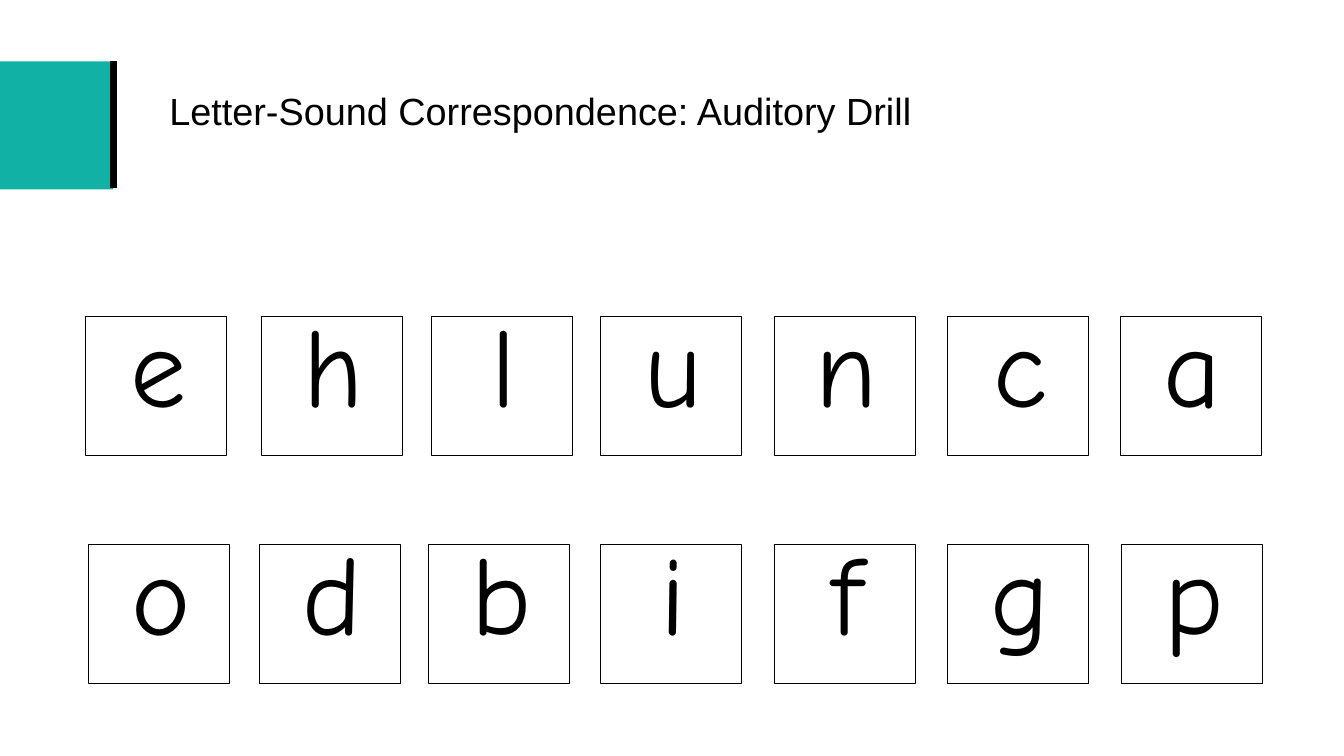
from pptx import Presentation, util as u
from pptx.dml.color import RGBColor
from pptx.enum import shapes, text
from pptx.oxml import parse_xml
from pptx.oxml.ns import nsdecls

ROWS = [
    (3.14, "ehlunca", [0.85, 2.59, 4.28, 5.96, 7.68, 9.4, 11.11]),
    (5.4, "odbifgp", [0.88, 2.57, 4.25, 5.96, 7.68, 9.4, 11.12]),
]


def color(code):
    return RGBColor.from_string(code)


def write(frame, words, size, font, align, anchor, spacing, before=0, indent=0):
    frame.word_wrap = True
    frame.auto_size = text.MSO_AUTO_SIZE.NONE
    frame.vertical_anchor = anchor
    frame.margin_left = frame.margin_right = u.Inches(0.1)
    frame.margin_top = frame.margin_bottom = u.Inches(0.05)
    para = frame.paragraphs[0]
    para.alignment = align
    para.line_spacing = spacing
    para.space_before = u.Pt(before)
    props = para._p.get_or_add_pPr()
    props.set("marL", str(u.Inches(indent)))
    props.set("indent", "0")
    run = para.add_run()
    run.text = words
    run.font.size = u.Pt(size)
    run.font.name = font
    run.font.color.rgb = color("000000")


def box(slide, left, top, width, height, fill=None, line=None):
    rect = slide.shapes.add_shape(
        shapes.MSO_SHAPE.RECTANGLE,
        u.Inches(left), u.Inches(top), u.Inches(width), u.Inches(height))
    rect.shadow.inherit = False
    if fill:
        rect.fill.solid()
        rect.fill.fore_color.rgb = color(fill)
    else:
        rect.fill.background()
    if line:
        rect.line.color.rgb = color(line)
        rect.line.width = u.Pt(0.75)
    else:
        rect.line.fill.background()
    return rect


def bar(slide, left, top, end, width):
    """Draw a thick vertical black line."""
    line = slide.shapes.add_connector(
        shapes.MSO_CONNECTOR.STRAIGHT,
        u.Inches(left), u.Inches(top), u.Inches(left), u.Inches(end))
    line.line.color.rgb = color("000000")
    line.line.width = u.Pt(width)
    line._element.spPr.append(parse_xml(f"<a:effectLst {nsdecls('a')}/>"))


def head(slide, words):
    title = slide.shapes.title
    title.left, title.top = u.Inches(1.58), u.Inches(0.4)
    title.width, title.height = u.Inches(10.83), u.Inches(1.45)
    write(title.text_frame, words, size=27, font="Arial",
          align=text.PP_ALIGN.LEFT, anchor=text.MSO_ANCHOR.MIDDLE, spacing=0.9)


def card(slide, letter, left, top):
    rect = box(slide, left, top, 1.4, 1.38, line="000000")
    write(rect.text_frame, letter, size=80, font="Comic Neue",
          align=text.PP_ALIGN.CENTER, anchor=text.MSO_ANCHOR.TOP,
          spacing=0.8, before=10, indent=0.04)


def main():
    deck = Presentation()
    deck.slide_width, deck.slide_height = u.Inches(13.33), u.Inches(7.5)
    slide = deck.slides.add_slide(deck.slide_layouts[5])
    box(slide, 0, 0.61, 1.12, 1.27, fill="11B2A5")
    bar(slide, 1.13, 0.61, 1.87, width=5)
    head(slide, "Letter-Sound Correspondence: Auditory Drill")
    for top, letters, lefts in ROWS:
        for letter, left in zip(letters, lefts):
            card(slide, letter, left, top)
    deck.save("out.pptx")


if __name__ == "__main__":
    main()
